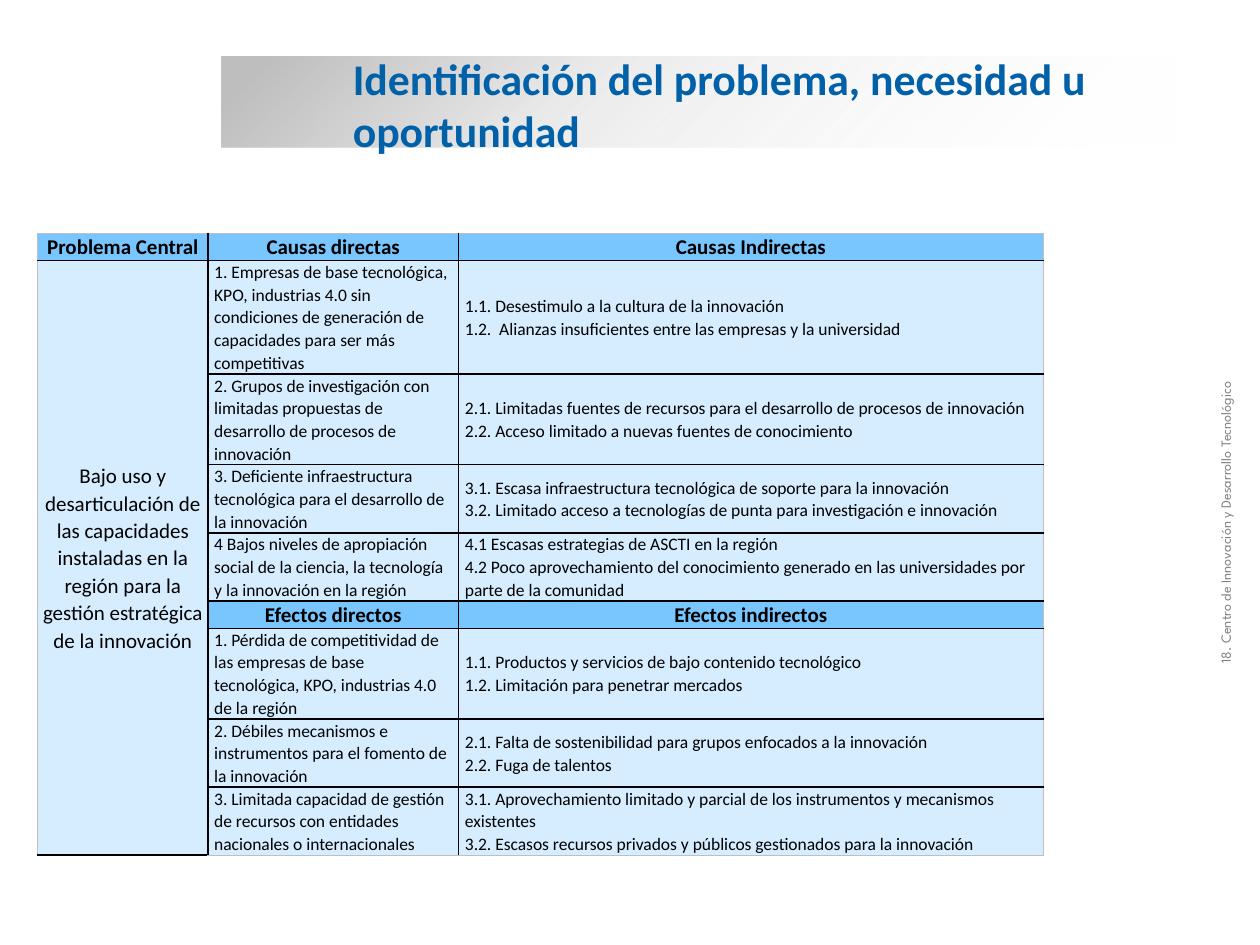
from copy import deepcopy
from lxml.etree import SubElement as Sub
from pptx import Presentation
from pptx.dml.color import RGBColor as RGB
from pptx.enum.shapes import MSO_SHAPE as Shape
from pptx.enum.text import MSO_ANCHOR as Anchor, MSO_AUTO_SIZE as Fit, PP_ALIGN as Align
from pptx.oxml.ns import qn
from pptx.util import Inches, Pt

theme = dict(
    font="Calibri", side_font="League Spartan",
    blue="0060A8", head="79C6FF", pale="D5EDFF", ink="000000",
    grey="808080", edge="BFBFBF", white="FFFFFF",
    title=25, large=12, small=10, side=8,
)

prs = Presentation()
prs.slide_width, prs.slide_height = Inches(10), Inches(7.5)
slide = prs.slides.add_slide(prs.slide_layouts[5])
shapes = slide.shapes


def box(x, y, w, h):
    """Turn percentages of the slide into left, top, width, height."""
    wide, high = prs.slide_width, prs.slide_height
    return [int(n * size / 100) for n, size in zip((x, y, w, h), (wide, high) * 2)]


def write(frame, text, size, color=theme["ink"], font=theme["font"], bold=False,
          align=Align.LEFT, line=None, after=0):
    frame.word_wrap = True
    para = frame.paragraphs[0]
    para.text = text
    para.alignment = align
    para.space_before, para.space_after = Pt(0), Pt(after)
    if line:
        para.line_spacing = line
    for run in para.runs:
        run.font.name, run.font.size, run.font.bold = font, Pt(size), bold
        run.font.color.rgb = RGB.from_string(color)
    # Line breaks take the same format as the words
    for brk in para._p.findall(qn("a:br")):
        brk.append(deepcopy(para.runs[0]._r.rPr))


# Fading band behind the title
band = shapes.add_shape(Shape.RECTANGLE, *box(17.6, 6, 76.1, 9.6))
band.shadow.inherit = False
band.line.fill.background()
band.fill.gradient()
grad = band._element.spPr.find(qn("a:gradFill"))
for child in list(grad):
    grad.remove(child)
stops = Sub(grad, qn("a:gsLst"))
for pos, color, alpha in ((5, "edge", 100), (37, "edge", 31), (100, "white", 0)):
    stop = Sub(stops, qn("a:gs"), pos=str(pos * 1000))
    tint = Sub(stop, qn("a:srgbClr"), val=theme[color])
    Sub(tint, qn("a:alpha"), val=str(alpha * 1000))
Sub(grad, qn("a:lin"), ang=str(45 * 60000), scaled="0")
shapes._spTree.insert(2, band._element)

# Title
title = shapes.title
title.left, title.top, title.width, title.height = box(27, 4.5, 67.5, 13)
title.text_frame.auto_size = Fit.NONE
title.text_frame.vertical_anchor = Anchor.MIDDLE
write(title.text_frame, "Identificación del problema, necesidad u oportunidad",
      theme["title"], color=theme["blue"], bold=True)

# Table of causes and effects
rows = [
    ("Problema Central", "Causas directas", "Causas Indirectas"),
    ("Bajo uso y desarticulación de las capacidades instaladas en la región "
     "para la gestión estratégica de la innovación",
     "1. Empresas de base tecnológica, KPO, industrias 4.0 sin condiciones de "
     "generación de capacidades para ser más competitivas",
     "1.1. Desestimulo a la cultura de la innovación\n"
     "1.2.  Alianzas insuficientes entre las empresas y la universidad"),
    ("", "2. Grupos de investigación con limitadas propuestas de desarrollo de "
     "procesos de innovación",
     "2.1. Limitadas fuentes de recursos para el desarrollo de procesos de innovación\n"
     "2.2. Acceso limitado a nuevas fuentes de conocimiento"),
    ("", "3. Deficiente infraestructura tecnológica para el desarrollo de la innovación",
     "3.1. Escasa infraestructura tecnológica de soporte para la innovación\n"
     "3.2. Limitado acceso a tecnologías de punta para investigación e innovación"),
    ("", "4 Bajos niveles de apropiación social de la ciencia, la tecnología y la "
     "innovación en la región",
     "4.1 Escasas estrategias de ASCTI en la región\n"
     "4.2 Poco aprovechamiento del conocimiento generado en las universidades por "
     "parte de la comunidad"),
    ("", "Efectos directos", "Efectos indirectos"),
    ("", "1. Pérdida de competitividad de las empresas de base tecnológica, KPO, "
     "industrias 4.0 de la región",
     "1.1. Productos y servicios de bajo contenido tecnológico\n"
     "1.2. Limitación para penetrar mercados"),
    ("", "2. Débiles mecanismos e instrumentos para el fomento de la innovación",
     "2.1. Falta de sostenibilidad para grupos enfocados a la innovación\n"
     "2.2. Fuga de talentos"),
    ("", "3. Limitada capacidad de gestión de recursos con entidades nacionales o "
     "internacionales",
     "3.1. Aprovechamiento limitado y parcial de los instrumentos y mecanismos existentes\n"
     "3.2. Escasos recursos privados y públicos gestionados para la innovación"),
]
widths = (1.35, 1.99, 4.64)
heights = (0.21, 0.89, 0.71, 0.54, 0.54, 0.21, 0.71, 0.54, 0.54)
last_row, last_col = len(rows) - 1, len(widths) - 1

table = shapes.add_table(len(rows), len(widths), *box(3, 24.67, 79.8, 65.2)).table
table.first_row = table.horz_banding = False
for col, width in zip(table.columns, widths):
    col.width = Inches(width)
for row, height in zip(table.rows, heights):
    row.height = Inches(height)
table.cell(1, 0).merge(table.cell(last_row, 0))

for i, row in enumerate(rows):
    for j, text in enumerate(row):
        cell = table.cell(i, j)
        head = i == 0 or (i == 5 and j > 0)
        mid = head or j == 0
        # Black rules inside, a thin grey rule around
        outer = {"lnL": j == 0, "lnR": j == last_col, "lnT": i == 0, "lnB": i == last_row}
        for side, out in outer.items():
            rule = Sub(cell._tc.get_or_add_tcPr(), qn("a:" + side),
                       w=str(Pt(0.5 if out else 1)))
            fill = Sub(rule, qn("a:solidFill"))
            Sub(fill, qn("a:srgbClr"), val=theme["edge" if out else "ink"])
        cell.fill.solid()
        cell.fill.fore_color.rgb = RGB.from_string(theme["head" if head else "pale"])
        cell.margin_left = cell.margin_right = Inches(0.04 if mid else 0.05)
        cell.margin_top = cell.margin_bottom = 0
        cell.vertical_anchor = Anchor.MIDDLE
        write(cell.text_frame, text, theme["large" if mid else "small"], bold=head,
              align=Align.CENTER if mid else Align.LEFT, line=1.07,
              after=0 if head else 12 if mid else 8)

# Sideways caption
side = shapes.add_textbox(*box(72.1, 36.3, 50.4, 3.2))
side.rotation = 270
side.text_frame.auto_size = Fit.SHAPE_TO_FIT_TEXT
write(side.text_frame, "18. Centro de Innovación y Desarrollo Tecnológico",
      theme["side"], color=theme["grey"], font=theme["side_font"])

prs.save("out.pptx")
